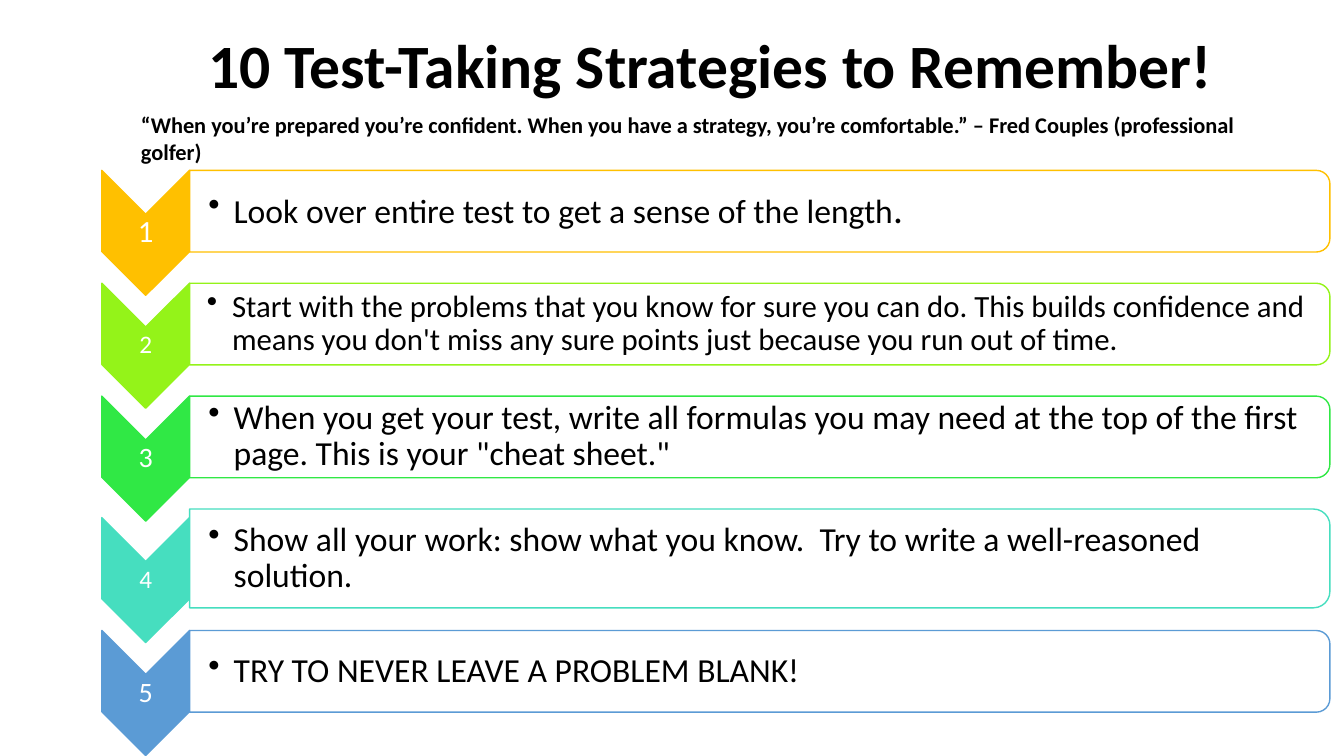
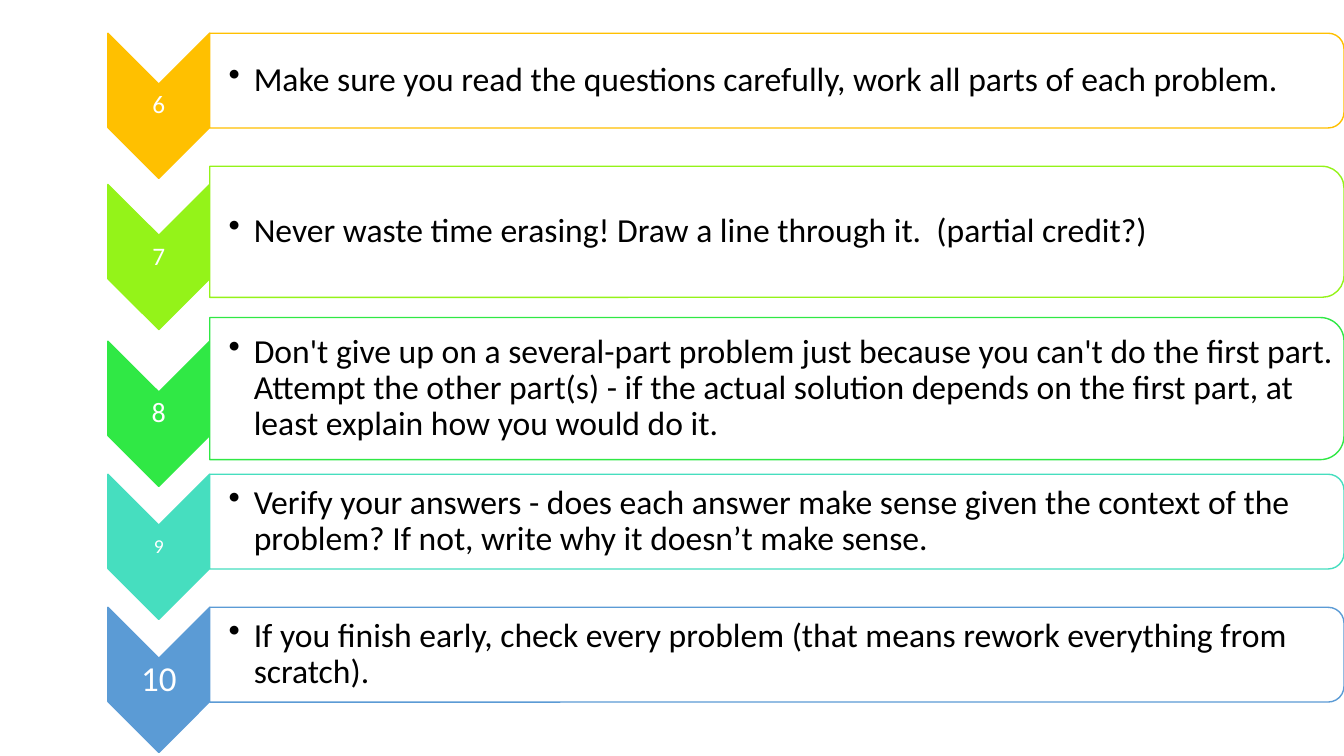
import pptx
import pptx.dml.color
import pptx.enum.shapes
import pptx.enum.text
import pptx.util
import lxml.etree
from pptx.util import Inches

SHAPES = pptx.enum.shapes.MSO_SHAPE
ALIGN = pptx.enum.text.PP_ALIGN
ANCHOR = pptx.enum.text.MSO_ANCHOR

# Shared style
FONT = "Calibri"
BLACK, WHITE = "000000", "FFFFFF"
ROW_COLOURS = ["FFC000", "94F319", "30E845", "46DEBF", "5B9BD5"]
BULLET_INDENT = 0.25
INSET_PER_POINT = 1 / 128  # left margin of a panel text, by its size
CORNER_INSET = 0.05        # room for rounded corners, by panel height

# Content
TITLE = "10 Test-Taking Strategies to Remember!"
QUOTE = ("“When you’re prepared you’re confident. When you have a strategy, "
         "you’re comfortable.”\u00a0– Fred Couples (professional golfer)")

# Each row: number, number size, panel height, spans of (text, size)
FIRST_ROWS = [
    ("1", 22, 0.81, [("Look over entire test to get a sense of the length", 24),
                     (".", 28)]),
    ("2", 18, 0.81, [("Start with the problems that you know for sure you can do. "
                      "This builds confidence and means you don't miss any sure "
                      "points just because you run out of time.", 22)]),
    ("3", 20, 0.81, [("When you get your test, write all formulas you may need at "
                      "the top of the first page. This is your \"cheat sheet.\"", 24)]),
    ("4", 18, 0.98, [("Show all your work: show what you know.  Try to write a "
                      "well-reasoned solution.", 24)]),
    ("5", 20, 0.81, [("TRY TO NEVER LEAVE A PROBLEM BLANK!", 24)]),
]
SECOND_ROWS = [
    ("6", 18, 0.94, [("Make sure you read the questions carefully, work all parts "
                      "of each problem.", 24)]),
    ("7", 18, 1.3, [("Never waste time erasing! Draw a line through it.  "
                     "(partial credit?)", 24)]),
    ("8", 20, 1.41, [("Don't give up on a several-part problem just because you "
                      "can't do the first part. Attempt the other part(s) - if the "
                      "actual solution depends on the first part, at least explain "
                      "how you would do it.", 24)]),
    ("9", 14, 0.94, [("Verify your answers - does each answer make sense given the "
                      "context of the problem? If not, write why it doesn’t make "
                      "sense.", 24)]),
    ("10", 25, 0.94, [("If you finish early, check every problem (that means rework "
                       "everything from scratch).", 24)]),
]

# Chevron list geometry on each slide
FIRST_LIST = dict(left=1.01, top=1.69, chevron_width=0.87, chevron_height=1.24,
                  panel_width=11.31, panel_height=0.81, pitch=1.12)
SECOND_LIST = dict(left=1.07, top=0.33, chevron_width=1.01, chevron_height=1.44,
                   panel_width=11.25, panel_height=0.94, pitch=1.32)


def colour(value):
    return pptx.dml.color.RGBColor.from_string(value)


def add_text(page, spans, left, top, width, height, ink=BLACK, bold=False,
             align=ALIGN.LEFT, anchor=ANCHOR.MIDDLE, spacing=0.9,
             margins=(0.1, 0.05, 0.1, 0.05), bullet=False):
    """Add a one-paragraph text box; spans are (text, size) pairs."""
    box = page.shapes.add_textbox(Inches(left), Inches(top),
                                  Inches(width), Inches(height))
    frame = box.text_frame
    frame.word_wrap = True
    frame.vertical_anchor = anchor
    (frame.margin_left, frame.margin_top,
     frame.margin_right, frame.margin_bottom) = map(Inches, margins)
    para = frame.paragraphs[0]
    para.alignment = align
    para.line_spacing = spacing
    if bullet:
        settings = para._p.get_or_add_pPr()
        settings.set("marL", str(Inches(BULLET_INDENT)))
        settings.set("indent", str(-Inches(BULLET_INDENT)))
        mark = lxml.etree.SubElement(settings, pptx.oxml.ns.qn("a:buChar"))
        mark.set("char", "•")
    for text, size in spans:
        span = para.add_run()
        span.text = text
        span.font.name = FONT
        span.font.size = pptx.util.Pt(size)
        span.font.bold = bold
        span.font.color.rgb = colour(ink)


def add_turned_shape(page, kind, left, top, width, height, fill, line):
    """Add a shape turned a quarter clockwise that covers the given area."""
    shape = page.shapes.add_shape(
        kind, Inches(left + (width - height) / 2), Inches(top + (height - width) / 2),
        Inches(height), Inches(width))
    shape.rotation = 90
    shape.shadow.inherit = False
    shape.fill.solid()
    shape.fill.fore_color.rgb = colour(fill)
    shape.line.color.rgb = colour(line)
    shape.line.width = pptx.util.Pt(1)


def add_chevron_list(page, rows, left, top, chevron_width, chevron_height,
                     panel_width, panel_height, pitch):
    panel_left = left + chevron_width
    label_height = chevron_height - chevron_width
    for index, (number, number_size, height, spans) in enumerate(rows):
        # A taller panel pushes its row down by half of its extra height
        if index:
            top += pitch + (height - panel_height) / 2
        accent = ROW_COLOURS[index]

        # Numbered chevron
        add_turned_shape(page, SHAPES.CHEVRON, left, top, chevron_width,
                         chevron_height, accent, accent)
        add_text(page, [(number, number_size)], left, top + chevron_width / 2,
                 chevron_width, label_height, ink=WHITE, align=ALIGN.CENTER,
                 margins=(0.01,) * 4)

        # Panel with its strategy
        panel_top = top + (panel_height - height) / 2
        inset = CORNER_INSET * height
        add_turned_shape(page, SHAPES.ROUND_2_SAME_RECTANGLE, panel_left, panel_top,
                         panel_width, height, WHITE, accent)
        add_text(page, spans, panel_left, panel_top + inset, panel_width - inset,
                 height - 2 * inset, bullet=True,
                 margins=(spans[0][1] * INSET_PER_POINT, 0.02, 0.02, 0.02))


def main():
    deck = pptx.Presentation()
    deck.slide_width, deck.slide_height = Inches(13.33), Inches(7.5)
    blank = deck.slide_layouts[6]

    # Slide 1: title, quote and strategies 1 to 5
    page = deck.slides.add_slide(blank)
    add_text(page, [(TITLE, 44)], 0.91, 0.1, 12.28, 1.17, bold=True,
             align=ALIGN.CENTER)
    add_text(page, [(QUOTE, 16)], 1.3, 1.05, 11.64, 0.37, bold=True,
             anchor=ANCHOR.TOP, spacing=1.0)
    add_chevron_list(page, FIRST_ROWS, **FIRST_LIST)

    # Slide 2: strategies 6 to 10
    page = deck.slides.add_slide(blank)
    add_chevron_list(page, SECOND_ROWS, **SECOND_LIST)

    deck.save("out.pptx")


if __name__ == "__main__":
    main()
